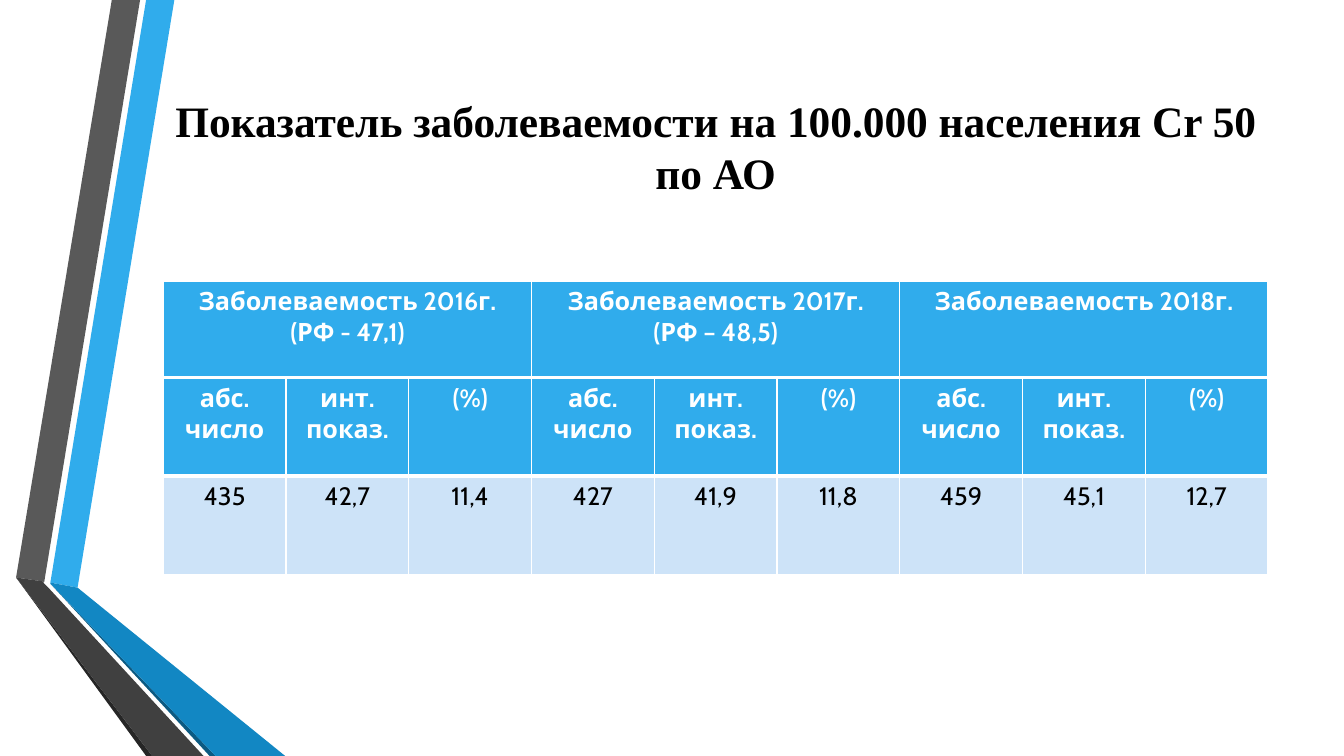
from dataclasses import dataclass

from lxml.etree import SubElement
from pptx import Presentation
from pptx.dml.color import RGBColor as Color
from pptx.enum.text import MSO_ANCHOR as Anchor, PP_ALIGN as Align
from pptx.oxml.ns import qn
from pptx.util import Pt


@dataclass(frozen=True)
class Theme:
    blue: str = "30ACEC"
    deep_blue: str = "1287C3"
    navy: str = "0C5A82"
    gray: str = "595959"
    charcoal: str = "404040"
    near_black: str = "262626"
    pale_blue: str = "CDE3F8"
    white: str = "FFFFFF"
    black: str = "000000"
    title_font: str = "Times New Roman"
    table_font: str = "Cabin"
    title_size: float = 31
    title_leading: float = 37
    table_size: float = 18
    thin_border: float = 1
    thick_border: float = 3


class SlideBuilder:
    def __init__(self, slide, theme):
        self.slide = slide
        self.theme = theme

    def style(self, paragraph, font_name, size, color, bold):
        paragraph.alignment = Align.CENTER
        font = paragraph.font
        font.name, font.size, font.bold = font_name, Pt(size), bold
        font.color.rgb = Color.from_string(color)

    def band(self, color, points):
        first, *others = [(Pt(x), Pt(y)) for x, y in points]
        builder = self.slide.shapes.build_freeform(*first)
        builder.add_line_segments(others, close=True)
        shape = builder.convert_to_shape()
        shape.shadow.inherit = False
        shape.fill.solid()
        shape.fill.fore_color.rgb = Color.from_string(color)
        shape.line.fill.background()

    def title(self, text, left, top, width, height):
        theme = self.theme
        box = self.slide.shapes.add_textbox(Pt(left), Pt(top), Pt(width), Pt(height))
        frame = box.text_frame
        frame.word_wrap = True
        frame.vertical_anchor = Anchor.MIDDLE
        # Lift the text by half a line above the middle
        frame.margin_bottom = frame.margin_top + Pt(theme.title_leading)
        paragraph = frame.paragraphs[0]
        paragraph.text = text
        paragraph.line_spacing = Pt(theme.title_leading)
        self.style(paragraph, theme.title_font, theme.title_size, theme.black, True)

    def borders(self, cell, bottom_width):
        properties = cell._tc.get_or_add_tcPr()
        thin = self.theme.thin_border
        for side, width in (("L", thin), ("R", thin), ("T", thin), ("B", bottom_width)):
            line = SubElement(properties, qn(f"a:ln{side}"), w=str(Pt(width)))
            fill = SubElement(line, qn("a:solidFill"))
            SubElement(fill, qn("a:srgbClr"), val=self.theme.white)

    def cell(self, cell, text, is_header):
        theme = self.theme
        self.borders(cell, theme.thick_border if is_header else theme.thin_border)
        cell.fill.solid()
        cell.fill.fore_color.rgb = Color.from_string(
            theme.blue if is_header else theme.pale_blue)
        cell.text = text
        color = theme.white if is_header else theme.black
        for paragraph in cell.text_frame.paragraphs:
            self.style(paragraph, theme.table_font, theme.table_size, color, is_header)

    def table(self, rows, left, top, width, row_height):
        column_count = len(rows[0])
        table = self.slide.shapes.add_table(
            len(rows), column_count, Pt(left), Pt(top),
            Pt(width), Pt(row_height * len(rows))).table
        table.first_row = table.horz_banding = False
        for column in table.columns:
            column.width = Pt(width / column_count)
        for row_index, texts in enumerate(rows):
            table.rows[row_index].height = Pt(row_height)
            for column_index, text in enumerate(texts):
                self.cell(table.cell(row_index, column_index), text, row_index == 0)


def main():
    presentation = Presentation()
    presentation.slide_width, presentation.slide_height = Pt(960), Pt(540)
    theme = Theme()
    builder = SlideBuilder(
        presentation.slides.add_slide(presentation.slide_layouts[6]), theme)

    # Folded ribbons on the left edge
    bottom = 540
    gray_fold, blue_fold = (11.52, 412.56), (36, 416.88)
    ribbons = [
        (theme.blue, [(36, 416.16), (55.44, 419.76), (124.56, 0), (104.4, 0)]),
        (theme.gray, [(100.08, 0), (79.92, 0), gray_fold, (31.68, 415.44)]),
        (theme.near_black, [gray_fold, (104.4, bottom), (108.72, bottom)]),
        (theme.navy, [blue_fold, (149.76, bottom), (154.08, bottom)]),
        (theme.deep_blue, [blue_fold, (154.08, bottom), (203.76, bottom),
                           (55.44, 419.76), (36, 416.16)]),
        (theme.charcoal, [(145.44, bottom), (34.56, 419.76), (30.96, 416.16),
                          (31.68, 415.44), gray_fold, (108.72, bottom)]),
    ]
    for color, points in ribbons:
        builder.band(color, points)

    # Title
    left, width = 116.64, 789.12
    builder.title("Показатель заболеваемости на 100.000 населения Cr 50 по АО",
                  left, 54, width, 138.24)

    # Years, then the figures for each year
    years = ["Заболеваемость 2016г.\n(РФ - 47,1)",
             "Заболеваемость 2017г.\n(РФ – 48,5)",
             "Заболеваемость 2018г."]
    measures = ["абс.\nчисло", "инт.\nпоказ.", "(%)"]
    figures = ["435", "42,7", "11,4", "427", "41,9", "11,8", "459", "45,1", "12,7"]
    builder.table([years], left, 200.88, width, 69.12)
    builder.table([measures * len(years), figures], left, 270, width, 70.2)

    presentation.save("out.pptx")


if __name__ == "__main__":
    main()
